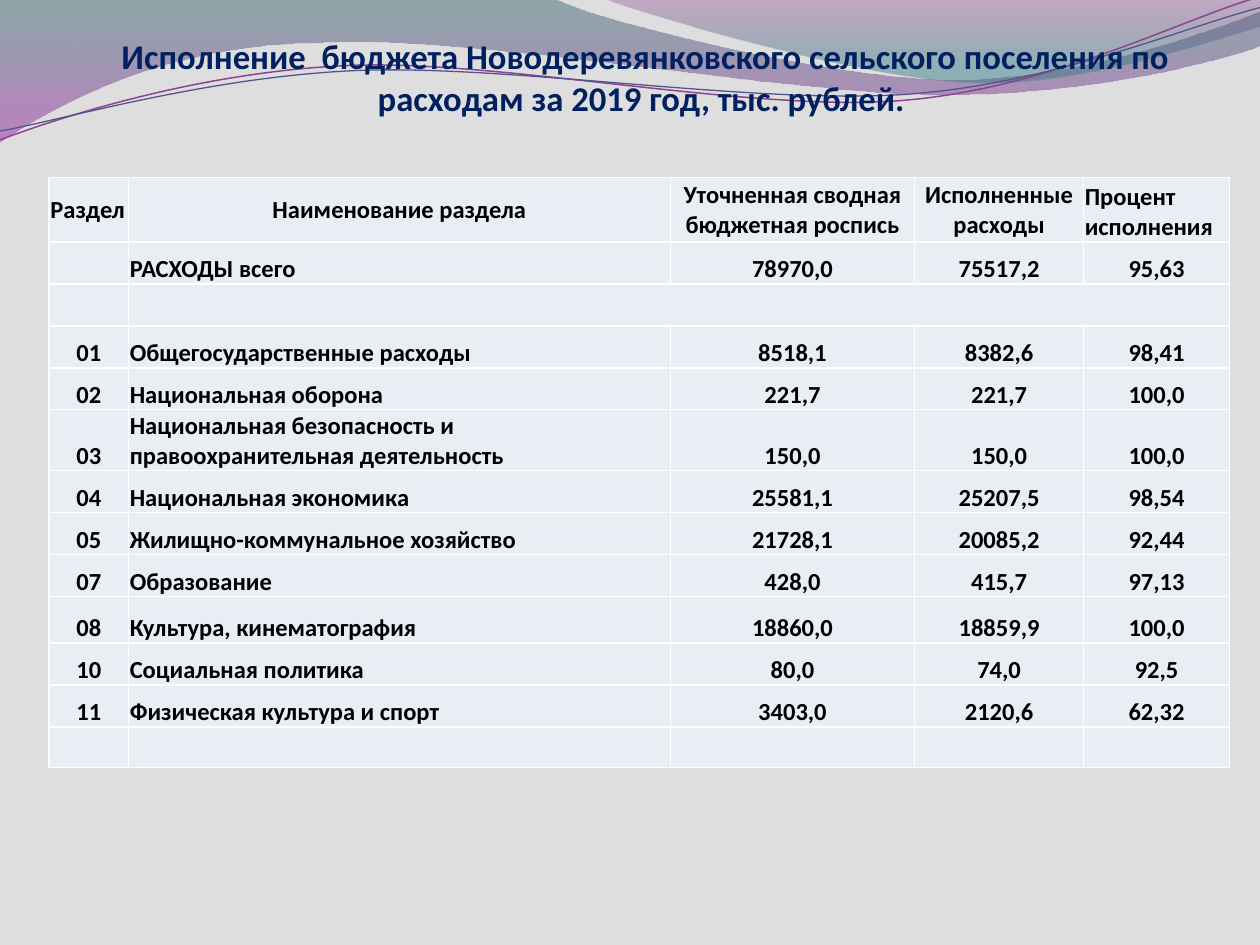
from math import cos, radians, sin

from lxml.etree import SubElement
from pptx import Presentation
from pptx.dml.color import RGBColor
from pptx.enum.text import MSO_ANCHOR, MSO_AUTO_SIZE, PP_ALIGN
from pptx.oxml.ns import qn
from pptx.util import Inches, Pt

BACKGROUND = RGBColor(0xDE, 0xDE, 0xDE)
NAVY = RGBColor(0x00, 0x20, 0x60)
BLACK = RGBColor(0x00, 0x00, 0x00)
CELL_FILL = RGBColor(0xE9, 0xED, 0xF4)
WHITE = RGBColor(0xFF, 0xFF, 0xFF)
DARK_TEAL = RGBColor(0x2D, 0x63, 0x68)
TEAL = RGBColor(0x2F, 0x7B, 0x82)
PURPLE = RGBColor(0xA5, 0x30, 0xA9)
PLUM = RGBColor(0x7F, 0x2F, 0x82)
LINE_PURPLE = RGBColor(0x8D, 0x44, 0x90)
LINE_INDIGO = RGBColor(0x53, 0x54, 0x8A)

FONT = "Calibri"
LINE_TILT = -2.7
LINE_CENTER = (4.99, 0.58)

# A wave is a start point and segments: one point for a line, three for a curve.
LEFT_WAVE = ((0, -0.01), [
    [(4.4, -0.01)],
    [(4.76, 0.17), (6.64, 0.63), (7.58, 0.63)],
    [(8.53, 0.63), (9.58, 0.26), (10, 0.09)],
    [(10.01, 0.36)],
    [(9.83, 0.44), (8.7, 0.76), (7.46, 0.75)],
    [(6.22, 0.75), (3.82, 0.28), (2.57, 0.34)],
    [(1.29, 0.35), (0.46, 0.83), (-0.01, 1.13)],
    [(0, -0.01)],
])
RIGHT_WAVE = ((4.79, -0.01), [
    [(5.09, 0.11), (6.82, 0.62), (7.69, 0.65)],
    [(8.56, 0.69), (9.61, 0.32), (10, 0.21)],
    [(10, 0)],
    [(4.79, -0.01)],
])
PURPLE_LINE = ((0, 1.11), [
    [(0.48, 0.93), (1.58, 0.57), (2.77, 0.52)],
    [(3.95, 0.47), (5.93, 0.89), (7.13, 0.8)],
    [(8.33, 0.71), (9.38, 0.15), (9.98, -0.02)],
])
INDIGO_LINE = ((0, 1.04), [
    [(0.47, 0.96), (1.64, 0.61), (2.83, 0.56)],
    [(4.03, 0.51), (5.97, 0.83), (7.17, 0.75)],
    [(8.36, 0.67), (9.41, 0.21), (10, 0.06)],
])

TITLE = ("Исполнение  бюджета Новодеревянковского сельского поселения "
         "по расходам за 2019 год, тыс. рублей. ")
COLUMN_WIDTHS = [0.63, 4.3, 1.94, 1.34, 1.16]
ROW_HEIGHT = 1 / 3
SPECIAL_HEIGHTS = {0: 0.51, 5: 0.47, 9: 0.37, 12: 0.32}
SPACER_ROW = 2
ROWS = [
    ("Раздел", "Наименование раздела", "Уточненная сводная бюджетная роспись",
     "Исполненные расходы", "Процент исполнения"),
    ("", "РАСХОДЫ всего", "78970,0", "75517,2", "95,63"),
    ("",) * 5,
    ("01", "Общегосударственные расходы", "8518,1", "8382,6", "98,41"),
    ("02", "Национальная оборона", "221,7", "221,7", "100,0"),
    ("03", "Национальная безопасность и правоохранительная деятельность",
     "150,0", "150,0", "100,0"),
    ("04", "Национальная экономика", "25581,1", "25207,5", "98,54"),
    ("05", "Жилищно-коммунальное хозяйство", "21728,1", "20085,2", "92,44"),
    ("07", "Образование", "428,0", "415,7", "97,13"),
    ("08", "Культура, кинематография", "18860,0", "18859,9", "100,0"),
    ("10", "Социальная политика", "80,0", "74,0", "92,5"),
    ("11", "Физическая культура и спорт", "3403,0", "2120,6", "62,32"),
    ("",) * 5,
]


def to_emu(point, tilt):
    """Turn a point back by the tilt that the finished shape receives."""
    angle = radians(-tilt)
    dx, dy = (value - center for value, center in zip(point, LINE_CENTER))
    return (Inches(LINE_CENTER[0] + dx * cos(angle) - dy * sin(angle)),
            Inches(LINE_CENTER[1] + dx * sin(angle) + dy * cos(angle)))


def add_wave(slide, wave, close, tilt=0):
    """Draw a wave as a freeform whose three-point segments are Bezier curves."""
    start, segments = wave
    segments = [[to_emu(point, tilt) for point in segment] for segment in segments]
    builder = slide.shapes.build_freeform(*to_emu(start, tilt), scale=1.0)
    builder.add_line_segments([segment[-1] for segment in segments], close=close)
    shape = builder.convert_to_shape()
    lines = list(shape._element.iter(qn("a:lnTo")))
    for line, segment in zip(lines, segments):
        if len(segment) == 1:
            continue
        curve = line.makeelement(qn("a:cubicBezTo"), {})
        for x, y in segment:
            SubElement(curve, qn("a:pt"), x=str(x - shape.left), y=str(y - shape.top))
        line.getparent().replace(line, curve)
    shape.rotation = tilt
    shape.shadow.inherit = False
    return shape


def add_gradient_wave(slide, wave, stops):
    """Fill a wave from top to bottom; a stop is position, colour, opacity in percent."""
    shape = add_wave(slide, wave, close=True)
    shape.line.fill.background()
    shape.fill.gradient()
    shape.fill.gradient_angle = 270
    for stop, (position, color, _) in zip(shape.fill.gradient_stops, stops):
        stop.position = position
        stop.color.rgb = color
    for element, (_, _, opacity) in zip(shape._element.spPr.iter(qn("a:srgbClr")), stops):
        SubElement(element, qn("a:alpha")).set("val", str(opacity * 1000))


def add_wave_line(slide, wave, color, width):
    shape = add_wave(slide, wave, close=False, tilt=LINE_TILT)
    shape.fill.background()
    shape.line.color.rgb = color
    shape.line.width = Pt(width)


def format_paragraph(paragraph, size, color, alignment):
    paragraph.alignment = alignment
    for run in paragraph.runs:
        run.font.name = FONT
        run.font.size = Pt(size)
        run.font.bold = True
        run.font.color.rgb = color


def place_title(slide):
    title = slide.shapes.title
    title.left, title.top = Inches(0.51), Inches(0.44)
    title.width, title.height = Inches(9.22), Inches(0.92)
    text_frame = title.text_frame
    text_frame.text = TITLE
    text_frame.word_wrap = True
    text_frame.auto_size = MSO_AUTO_SIZE.NONE
    text_frame.vertical_anchor = MSO_ANCHOR.BOTTOM
    text_frame.margin_left = text_frame.margin_right = 0
    text_frame.margin_bottom = Inches(0.42)
    format_paragraph(text_frame.paragraphs[0], 19.8, NAVY, PP_ALIGN.CENTER)
    slide.shapes._spTree.append(title._element)  # in front of the waves


def set_borders(cell):
    properties = cell._tc.get_or_add_tcPr()
    for index, side in enumerate(("lnL", "lnR", "lnT", "lnB")):
        line = properties.makeelement(qn(f"a:{side}"), {"w": str(Pt(1))})
        fill = SubElement(line, qn("a:solidFill"))
        SubElement(fill, qn("a:srgbClr")).set("val", str(WHITE))
        properties.insert(index, line)


def fill_cell(cell, text, row, column):
    cell.text = text
    cell.margin_left = cell.margin_right = cell.margin_top = Inches(0.01)
    cell.margin_bottom = 0
    is_header = row == 0
    last = len(COLUMN_WIDTHS) - 1
    cell.vertical_anchor = (MSO_ANCHOR.MIDDLE if is_header and column != last
                            else MSO_ANCHOR.BOTTOM)
    is_left = column in (0, last) if is_header else column == 1
    format_paragraph(cell.text_frame.paragraphs[0], 14, BLACK,
                     PP_ALIGN.LEFT if is_left else PP_ALIGN.CENTER)
    cell.fill.solid()
    cell.fill.fore_color.rgb = CELL_FILL
    set_borders(cell)


def add_budget_table(slide):
    heights = [SPECIAL_HEIGHTS.get(row, ROW_HEIGHT) for row in range(len(ROWS))]
    table = slide.shapes.add_table(
        len(ROWS), len(COLUMN_WIDTHS), Inches(0.39), Inches(1.41),
        Inches(sum(COLUMN_WIDTHS)), Inches(sum(heights))).table
    for column, width in zip(table.columns, COLUMN_WIDTHS):
        column.width = Inches(width)
    for row, height in zip(table.rows, heights):
        row.height = Inches(height)
    for row, texts in enumerate(ROWS):
        for column, text in enumerate(texts):
            fill_cell(table.cell(row, column), text, row, column)
    table.cell(SPACER_ROW, 1).merge(table.cell(SPACER_ROW, len(COLUMN_WIDTHS) - 1))


def main():
    presentation = Presentation()
    presentation.slide_width, presentation.slide_height = Inches(10), Inches(7.5)
    slide = presentation.slides.add_slide(presentation.slide_layouts[5])
    slide.background.fill.solid()
    slide.background.fill.fore_color.rgb = BACKGROUND
    add_gradient_wave(slide, LEFT_WAVE, [(0, DARK_TEAL, 45), (1, PURPLE, 55)])
    add_gradient_wave(slide, RIGHT_WAVE, [(0, PLUM, 30), (0.8, TEAL, 45)])
    add_wave_line(slide, PURPLE_LINE, LINE_PURPLE, 0.85)
    add_wave_line(slide, INDIGO_LINE, LINE_INDIGO, 0.75)
    place_title(slide)
    add_budget_table(slide)
    presentation.save("out.pptx")


if __name__ == "__main__":
    main()
